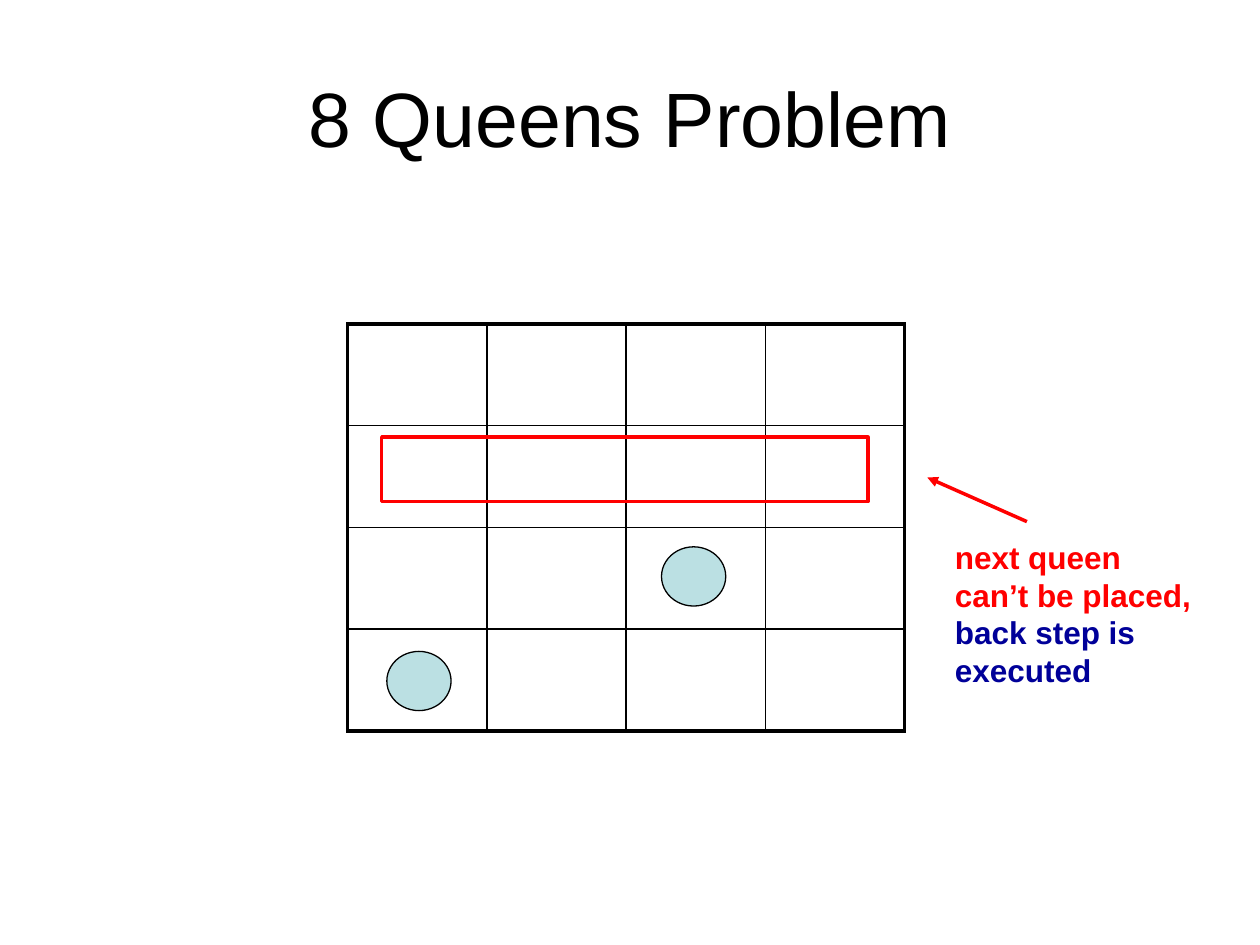
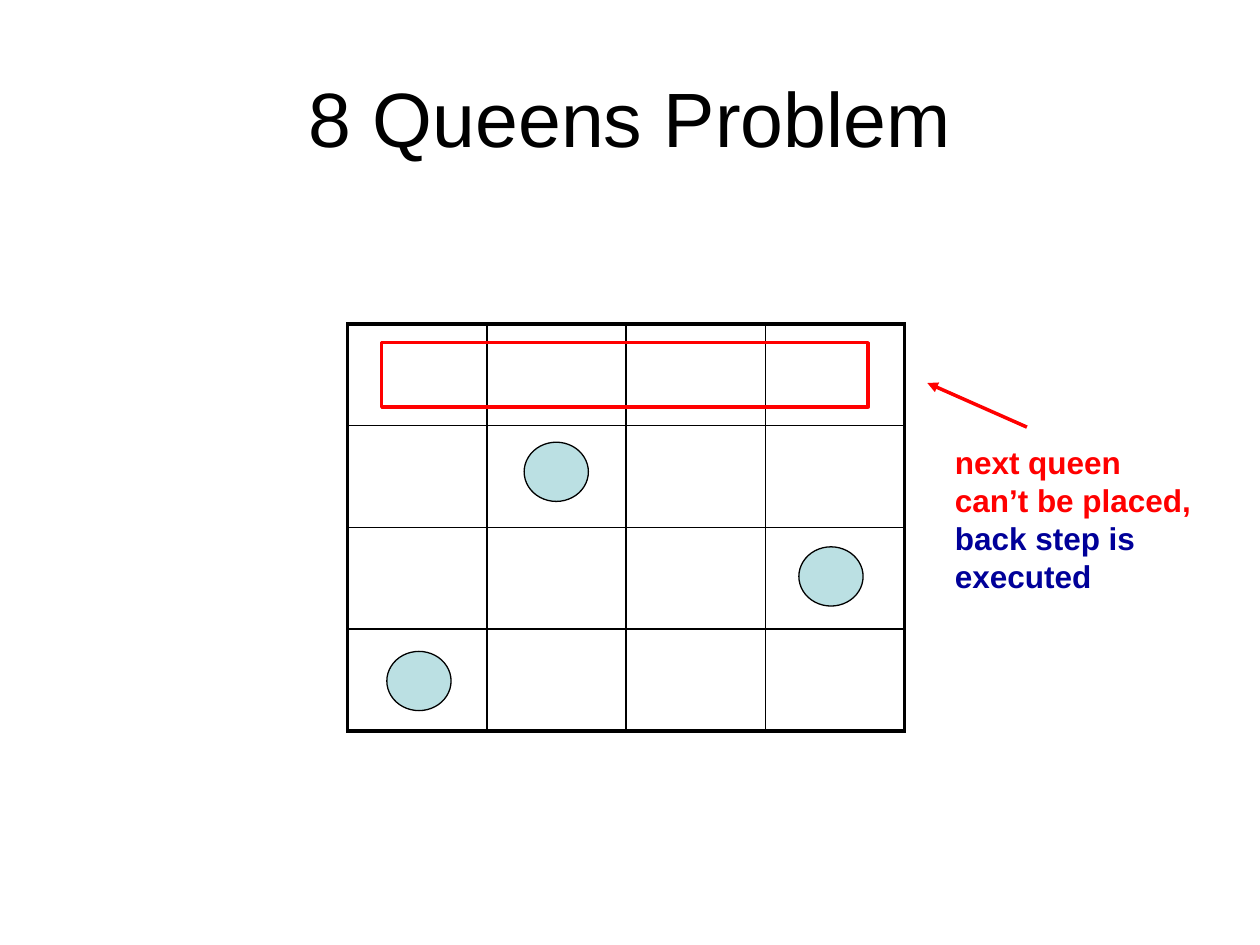
from dataclasses import dataclass

from lxml.etree import SubElement
from pptx import Presentation
from pptx.dml.color import RGBColor
from pptx.enum.shapes import MSO_CONNECTOR, MSO_SHAPE
from pptx.enum.text import MSO_ANCHOR, PP_ALIGN
from pptx.oxml.ns import qn
from pptx.slide import Slide
from pptx.table import _Cell
from pptx.util import Inches, Pt


@dataclass(frozen=True)
class Theme:
    font: str = "Arial"
    title_size: Pt = Pt(44)
    note_size: Pt = Pt(18)
    black: RGBColor = RGBColor(0x00, 0x00, 0x00)
    queen: RGBColor = RGBColor(0xBB, 0xE0, 0xE3)
    blocked: RGBColor = RGBColor(0xFF, 0x00, 0x00)
    back_step: RGBColor = RGBColor(0x00, 0x00, 0x99)
    queen_line: Pt = Pt(0.75)
    blocked_line: Pt = Pt(2)
    inner_border: Pt = Pt(1)
    outer_border: Pt = Pt(2.25)


@dataclass(frozen=True)
class Queen:
    """A square, counted from the bottom left of the board."""
    column: int
    rank: int


@dataclass(frozen=True)
class Step:
    """One state of the search; blocked_top is the top of the red frame in inches."""
    queens: tuple[Queen, ...]
    blocked_top: float


THEME = Theme()
BOARD_SIZE = 4
STEPS = (
    Step((Queen(0, 0), Queen(2, 1)), 3.47),
    Step((Queen(0, 0), Queen(3, 1), Queen(1, 2)), 2.72),
)


def add_title(slide: Slide, text: str) -> None:
    tf = slide.shapes.add_textbox(Inches(0.5), Inches(0.3), Inches(9), Inches(1.25)).text_frame
    tf.word_wrap = True
    tf.vertical_anchor = MSO_ANCHOR.MIDDLE
    p = tf.paragraphs[0]
    p.text = text
    p.alignment = PP_ALIGN.CENTER
    p.font.name, p.font.size = THEME.font, THEME.title_size
    p.font.color.rgb = THEME.black


def set_borders(cell: _Cell, row: int, column: int) -> None:
    """Thick lines on the rim of the board, thin ones inside."""
    last = BOARD_SIZE - 1
    on_rim = {"a:lnL": column == 0, "a:lnR": column == last,
              "a:lnT": row == 0, "a:lnB": row == last}
    tc_pr = cell._tc.get_or_add_tcPr()
    for tag, outer in on_rim.items():
        width = THEME.outer_border if outer else THEME.inner_border
        ln = SubElement(tc_pr, qn(tag), w=str(int(width)))
        fill = SubElement(ln, qn("a:solidFill"))
        SubElement(fill, qn("a:srgbClr"), val=str(THEME.black))


def add_board(slide: Slide) -> None:
    table = slide.shapes.add_table(BOARD_SIZE, BOARD_SIZE, Inches(2.76), Inches(2.57),
                                   Inches(4.42), Inches(3.23)).table
    table.first_row = table.horz_banding = False
    for row in range(BOARD_SIZE):
        for column in range(BOARD_SIZE):
            cell = table.cell(row, column)
            set_borders(cell, row, column)
            cell.fill.background()


def add_queen(slide: Slide, queen: Queen) -> None:
    sp = slide.shapes.add_shape(
        MSO_SHAPE.OVAL, Inches(3.07 + 1.09 * queen.column), Inches(5.17 - 0.83 * queen.rank),
        Inches(0.51), Inches(0.47))
    sp.shadow.inherit = False
    sp.fill.solid()
    sp.fill.fore_color.rgb = THEME.queen
    sp.line.color.rgb, sp.line.width = THEME.black, THEME.queen_line


def add_blocked_frame(slide: Slide, top: float) -> None:
    sp = slide.shapes.add_shape(MSO_SHAPE.RECTANGLE, Inches(3.03), Inches(top),
                                Inches(3.86), Inches(0.51))
    sp.shadow.inherit = False
    sp.fill.background()
    sp.line.color.rgb, sp.line.width = THEME.blocked, THEME.blocked_line


def add_note(slide: Slide, top: float) -> None:
    tf = slide.shapes.add_textbox(Inches(7.48), Inches(top), Inches(2.13), Inches(1.3)).text_frame
    tf.word_wrap = True
    p = tf.paragraphs[0]
    p.font.name, p.font.size, p.font.bold = THEME.font, THEME.note_size, True
    for text, color in (("next queen can’t be placed, ", THEME.blocked),
                        ("back step is executed", THEME.back_step)):
        r = p.add_run()
        r.text = text
        r.font.color.rgb = color


def add_arrow(slide: Slide, start_y: float, end_y: float) -> None:
    line = slide.shapes.add_connector(MSO_CONNECTOR.STRAIGHT, Inches(8.15), Inches(start_y),
                                      Inches(7.36), Inches(end_y))
    line.line.color.rgb, line.line.width = THEME.blocked, THEME.blocked_line
    SubElement(line.line._get_or_add_ln(), qn("a:tailEnd"), type="triangle")
    SubElement(line._element.spPr, qn("a:effectLst"))


def add_step(slide: Slide, step: Step) -> None:
    add_title(slide, "8 Queens Problem")
    add_board(slide)
    for queen in step.queens:
        add_queen(slide, queen)
    top = step.blocked_top
    add_blocked_frame(slide, top)
    add_note(slide, top + 0.75)
    add_arrow(slide, top + 0.67, top + 0.32)


def main() -> None:
    prs = Presentation()
    prs.slide_width, prs.slide_height = Inches(10), Inches(7.5)
    blank = prs.slide_layouts[6]
    for step in STEPS:
        add_step(prs.slides.add_slide(blank), step)
    prs.save("out.pptx")


if __name__ == "__main__":
    main()
